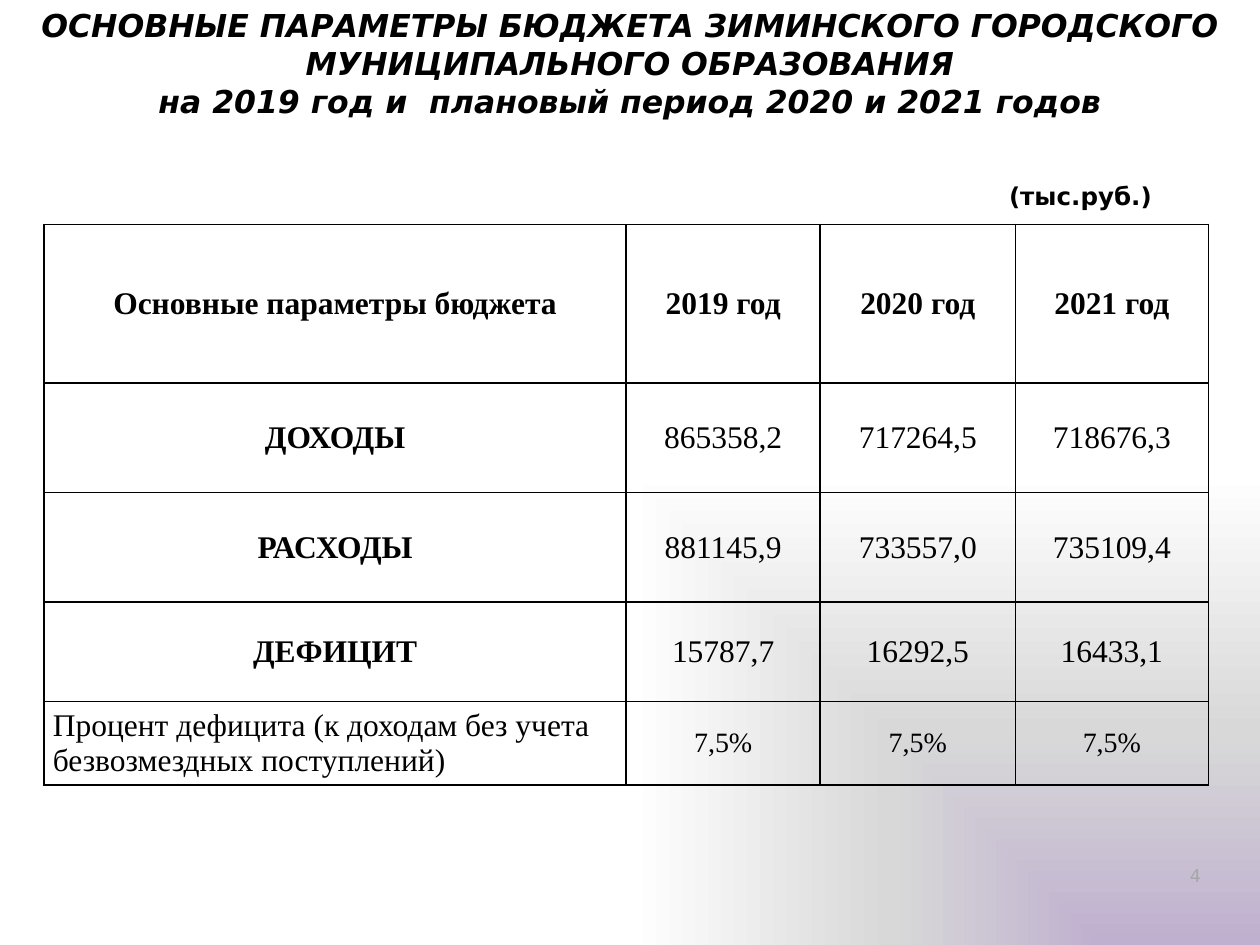
from pptx import Presentation
from pptx.dml.color import RGBColor
from pptx.enum.text import MSO_ANCHOR, MSO_AUTO_SIZE, PP_ALIGN
from pptx.oxml import parse_xml
from pptx.oxml.ns import nsdecls
from pptx.util import Inches, Pt

LEFT, CENTER, RIGHT = PP_ALIGN.LEFT, PP_ALIGN.CENTER, PP_ALIGN.RIGHT
TOP, MIDDLE = MSO_ANCHOR.TOP, MSO_ANCHOR.MIDDLE
NO_FIT = MSO_AUTO_SIZE.NONE
SANS, SERIF = "DejaVu Sans", "Times New Roman"
BLACK, GRAY = "000000", "A6A6A6"

TITLE = (
    "ОСНОВНЫЕ ПАРАМЕТРЫ БЮДЖЕТА ЗИМИНСКОГО ГОРОДСКОГО МУНИЦИПАЛЬНОГО ОБРАЗОВАНИЯ\n"
    "на 2019 год и  плановый период 2020 и 2021 годов"
)
ROWS = [
    ["Основные параметры бюджета", "2019 год", "2020 год", "2021 год"],
    ["ДОХОДЫ", "865358,2", "717264,5", "718676,3"],
    ["РАСХОДЫ", "881145,9", "733557,0", "735109,4"],
    ["ДЕФИЦИТ", "15787,7", "16292,5", "16433,1"],
    ["Процент дефицита (к доходам без учета безвозмездных поступлений)",
     "7,5%", "7,5%", "7,5%"],
]
WIDTHS = [4.62, 1.54, 1.55, 1.53]
HEIGHTS = [1.26, 0.87, 0.87, 0.79, 0.66]
STOPS = [(0, "BFB0CF"), (45, "D8D8D8"), (100, "FFFFFF")]


def color(code):
    return RGBColor.from_string(code)


def write(frame, text, size=18, font=SANS, fill=BLACK, bold=False,
          italic=False, align=LEFT):
    """Fill a text frame, one paragraph per line of text."""
    frame.word_wrap = True
    frame.text = text
    for para in frame.paragraphs:
        para.alignment = align
        for run in para.runs:
            face = run.font
            face.name, face.size = font, Pt(size)
            face.bold, face.italic = bold, italic
            face.color.rgb = color(fill)


def paint_back(slide):
    """Set a gradient that spreads from the lower right corner."""
    stops = "".join(
        f'<a:gs pos="{pos * 1000}"><a:srgbClr val="{code}"/></a:gs>'
        for pos, code in STOPS)
    back = parse_xml(
        f'<p:bg {nsdecls("p", "a")}><p:bgPr><a:gradFill rotWithShape="1">'
        f'<a:gsLst>{stops}</a:gsLst><a:path path="rect">'
        '<a:fillToRect l="100000" t="100000"/></a:path></a:gradFill>'
        '<a:effectLst/></p:bgPr></p:bg>')
    slide.element.cSld.insert(0, back)


def add_title(slide):
    title = slide.shapes.title
    title.left, title.top = Inches(0), Inches(0)
    title.width, title.height = Inches(10), Inches(1.01)
    frame = title.text_frame
    frame.auto_size, frame.vertical_anchor = NO_FIT, TOP
    write(frame, TITLE, bold=True, italic=True, align=CENTER)


def add_label(slide, text, left, top, width, height, **style):
    box = slide.shapes.add_textbox(
        Inches(left), Inches(top), Inches(width), Inches(height))
    write(box.text_frame, text, **style)


def add_edges(cell):
    props = cell._tc.get_or_add_tcPr()
    for spot, side in enumerate("LRTB"):
        props.insert(spot, parse_xml(
            f'<a:ln{side} {nsdecls("a")} w="12700"><a:solidFill>'
            f'<a:srgbClr val="{BLACK}"/></a:solidFill></a:ln{side}>'))


def add_grid(slide):
    table = slide.shapes.add_table(
        len(ROWS), len(WIDTHS), Inches(0.35), Inches(1.78),
        Inches(sum(WIDTHS)), Inches(sum(HEIGHTS))).table
    table.first_row = table.horz_banding = False
    for col, width in zip(table.columns, WIDTHS):
        col.width = Inches(width)
    last = len(ROWS) - 1
    for r, (row, height) in enumerate(zip(ROWS, HEIGHTS)):
        table.rows[r].height = Inches(height)
        for c, text in enumerate(row):
            cell = table.cell(r, c)
            cell.fill.background()
            cell.vertical_anchor = MIDDLE
            cell.margin_left = cell.margin_right = Inches(0.07)
            cell.margin_top = cell.margin_bottom = Inches(0)
            note = r == last and c == 0
            write(cell.text_frame, text, font=SERIF,
                  size=16 if r == last and c else 18,
                  bold=r == 0 or (c == 0 and not note),
                  align=LEFT if note else CENTER)
            add_edges(cell)


def main():
    deck = Presentation()
    deck.slide_width, deck.slide_height = Inches(10), Inches(7.5)
    slide = deck.slides.add_slide(deck.slide_layouts[5])
    paint_back(slide)
    add_grid(slide)
    add_title(slide)
    add_label(slide, "(тыс.руб.)", 7.91, 1.39, 1.91, 0.34, size=14, bold=True)
    add_label(slide, "4", 8.63, 6.82, 1, 0.27, size=10, fill=GRAY, align=RIGHT)
    deck.save("out.pptx")


if __name__ == "__main__":
    main()
